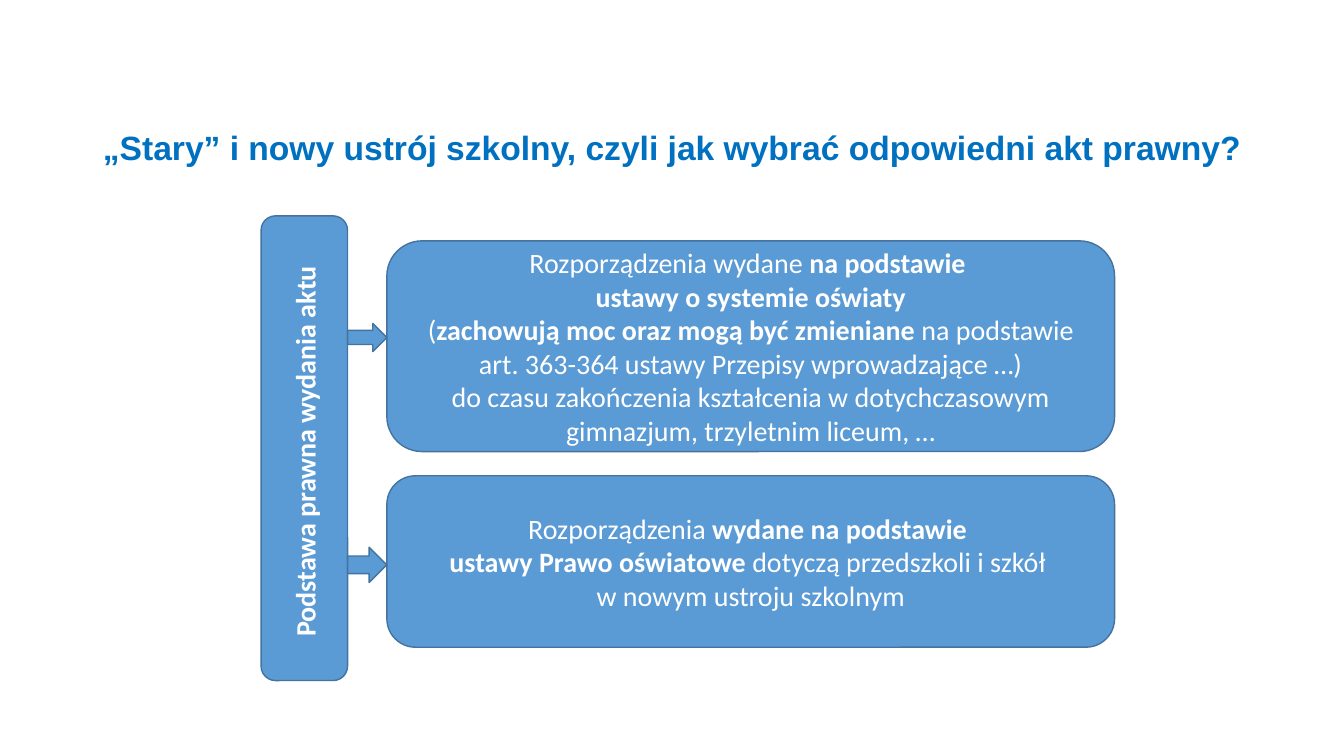
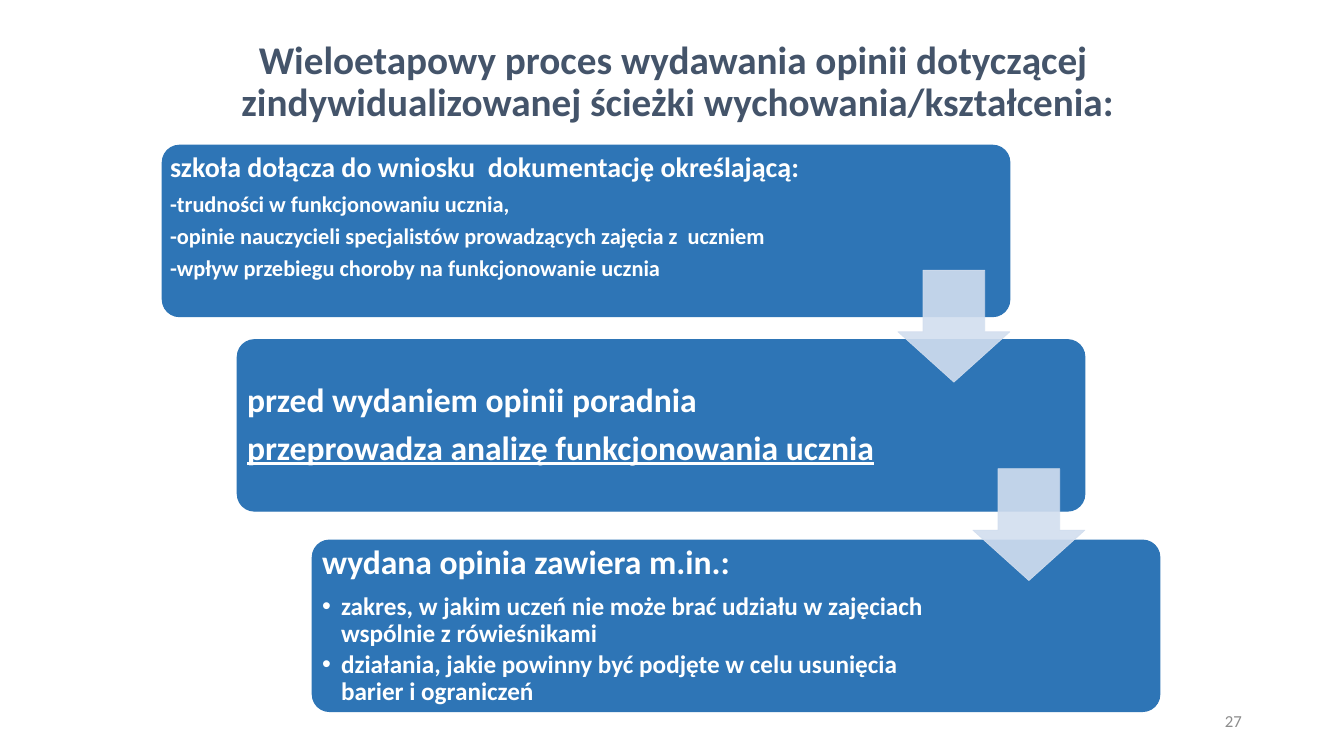
import pptx
import pptx.util
import pptx.dml.color
import pptx.enum.shapes
import pptx.enum.text
import pptx.oxml
import pptx.oxml.ns

Cm = pptx.util.Cm
Pt = pptx.util.Pt
SHAPE = pptx.enum.shapes.MSO_SHAPE
ALIGN = pptx.enum.text.PP_ALIGN
ANCHOR = pptx.enum.text.MSO_ANCHOR


def color(hex_code):
    return pptx.dml.color.RGBColor.from_string(hex_code)


def assign(target, values):
    for attribute, value in values.items():
        setattr(target, attribute, value)


def place(shape, left, top, width, height):
    assign(shape, dict(left=Cm(left), top=Cm(top), width=Cm(width), height=Cm(height)))


class Deck:
    BLUE, BLUE_EDGE = "5B9BD5", "43739E"
    STEP_BLUE, PALE_BLUE = "2E75B6", "D2DEEF"
    LINK_BLUE, SLATE, GREY, WHITE = "0070C0", "44546A", "8C8C8C", "FFFFFF"
    TITLE_LEFT, TITLE_WIDTH = 2.34, 29.21

    def __init__(self):
        self.presentation = pptx.Presentation()
        assign(self.presentation, dict(slide_width=Cm(33.87), slide_height=Cm(19.05)))
        self.slide = None

    def new_slide(self, title, top, height, size, ink, font="Calibri", align=ALIGN.CENTER):
        layout = self.presentation.slide_layouts.get_by_name("Title Only")
        self.slide = self.presentation.slides.add_slide(layout)
        heading = self.slide.shapes.title
        place(heading, self.TITLE_LEFT, top, self.TITLE_WIDTH, height)
        frame = heading.text_frame
        assign(frame, dict(word_wrap=True, vertical_anchor=ANCHOR.MIDDLE, margin_right=0,
                           auto_size=pptx.enum.text.MSO_AUTO_SIZE.NONE))
        self.paragraph(frame, f"*{title}", size, ink, font=font,
                       alignment=align, line_spacing=0.9)

    def paragraph(self, frame, text, size, ink, font="Calibri", underline=None, **layout):
        """Asterisks in the text switch bold on and off."""
        first = frame.paragraphs[0]
        paragraph = frame.add_paragraph() if first.runs else first
        assign(paragraph, layout)
        for part, words in enumerate(text.split("*")):
            for row, line in enumerate(words.split("\n")):
                if row:
                    paragraph.add_line_break()
                if line:
                    run = paragraph.add_run()
                    run.text = line
                    assign(run.font, dict(name=font, size=Pt(size), underline=underline,
                                          bold=part % 2 == 1))
                    run.font.color.rgb = color(ink)
        return paragraph

    def bullet(self, paragraph, indent):
        properties = paragraph._p.get_or_add_pPr()
        properties.set("marL", str(Cm(indent)))
        properties.set("indent", str(-Cm(indent)))
        for tag, attribute, value in (("a:buFont", "typeface", "Arial"),
                                      ("a:buChar", "char", "•")):
            mark = pptx.oxml.ns.qn(tag)
            properties.append(properties.makeelement(mark, {attribute: value}))

    def shape(self, kind, box, fill, edge, edge_width, adjustments=(), opacity=None):
        shape = self.slide.shapes.add_shape(kind, *map(Cm, box))
        shape.shadow.inherit = False
        shape.fill.solid()
        shape.fill.fore_color.rgb = color(fill)
        shape.line.color.rgb = color(edge)
        shape.line.width = Pt(edge_width)
        for index, value in enumerate(adjustments):
            shape.adjustments[index] = value
        if opacity:
            for paint in shape._element.spPr.iter(pptx.oxml.ns.qn("a:srgbClr")):
                alpha = paint.makeelement(pptx.oxml.ns.qn("a:alpha"), {"val": str(opacity * 1000)})
                paint.append(alpha)
        assign(shape.text_frame, dict(word_wrap=True, vertical_anchor=ANCHOR.MIDDLE))
        return shape

    def panel(self, box, lines, vertical=False):
        frame = self.shape(SHAPE.ROUNDED_RECTANGLE, box, self.BLUE, self.BLUE_EDGE, 1).text_frame
        if vertical:
            frame._txBody.bodyPr.set("vert", "vert270")
        for line in lines:
            self.paragraph(frame, line, 20, self.WHITE, alignment=ALIGN.CENTER)

    def link(self, box):
        self.shape(SHAPE.RIGHT_ARROW, box, self.BLUE, self.BLUE_EDGE, 1)

    def step(self, box, lines, text_width, inset, anchor):
        frame = self.shape(SHAPE.ROUNDED_RECTANGLE, box, self.STEP_BLUE, self.STEP_BLUE,
                           0.75, [0.1]).text_frame
        margin = Cm(inset)
        assign(frame, dict(vertical_anchor=anchor, margin_left=margin, margin_top=margin,
                           margin_bottom=margin, margin_right=Cm(box[2] - text_width + inset)))
        for text, size, style in lines:
            bulleted = style == "bullet"
            gap = 0.15 if bulleted else 0.35
            paragraph = self.paragraph(frame, f"*{text}", size, self.WHITE,
                                       underline=style == "underline" or None,
                                       alignment=ALIGN.LEFT, line_spacing=0.9,
                                       space_after=Pt(round(gap * size, 1)))
            if bulleted:
                self.bullet(paragraph, 0.48)

    def descent(self, left, top):
        self.shape(SHAPE.DOWN_ARROW, (left, top, 2.82, 2.82), self.PALE_BLUE, self.PALE_BLUE,
                   0.5, [0.55, 0.45], opacity=90)

    def page_number(self, number):
        footer = self.slide.shapes.add_textbox(Cm(23.93), Cm(17.65), Cm(7.62), Cm(1.02))
        assign(footer.text_frame, dict(word_wrap=True, vertical_anchor=ANCHOR.MIDDLE))
        self.paragraph(footer.text_frame, number, 12, self.GREY, alignment=ALIGN.RIGHT)


def legal_basis(deck):
    deck.new_slide("„Stary” i nowy ustrój szkolny, czyli jak wybrać odpowiedni akt prawny?",
                   2.87, 1.78, 24, deck.LINK_BLUE, font="Arial", align=ALIGN.LEFT)
    deck.panel((9.75, 6.07, 18.34, 5.31), [
        "Rozporządzenia wydane *na podstawie ",
        "*ustawy o systemie oświaty",
        "(*zachowują moc oraz mogą być zmieniane *na podstawie "
        "art. 363-364 ustawy Przepisy wprowadzające …)",
        "do czasu zakończenia kształcenia w dotychczasowym gimnazjum, trzyletnim liceum, …",
    ])
    deck.panel((6.58, 5.44, 2.18, 11.71), ["*Podstawa prawna wydania aktu "], vertical=True)
    deck.panel((9.75, 11.99, 18.34, 4.32), [
        "Rozporządzenia *wydane na podstawie ",
        "*ustawy Prawo oświatowe *dotyczą przedszkoli i szkół \nw nowym ustroju szkolnym",
    ])
    for top, height in ((8.15, 0.71), (13.79, 0.89)):
        deck.link((8.76, top, 0.99, height))


def opinion_process(deck):
    deck.new_slide("Wieloetapowy proces wydawania opinii dotyczącej \n"
                   "zindywidualizowanej ścieżki wychowania/kształcenia:",
                   1.02, 2.13, 28, deck.SLATE)
    steps = [
        (3.66, 16.97, 0.07, ANCHOR.TOP, [
            ("szkoła dołącza do wniosku  dokumentację określającą:", 20, None),
            ("-trudności w funkcjonowaniu ucznia,", 16, None),
            ("-opinie nauczycieli specjalistów prowadzących zajęcia z  uczniem", 16, None),
            ("-wpływ przebiegu choroby na funkcjonowanie ucznia", 16, None),
        ]),
        (8.56, 16.66, 0.12, ANCHOR.MIDDLE, [
            ("przed wydaniem opinii poradnia", 24, None),
            ("przeprowadza analizę funkcjonowania ucznia", 24, "underline"),
        ]),
        (13.61, 16.66, 0.12, ANCHOR.MIDDLE, [
            ("wydana opinia zawiera m.in.:", 24, None),
            ("zakres, w jakim uczeń nie może brać udziału w zajęciach "
             "wspólnie z rówieśnikami", 18, "bullet"),
            ("działania, jakie powinny być podjęte w celu usunięcia "
             "barier i ograniczeń", 18, "bullet"),
        ]),
    ]
    shift = 1.89
    for order, (top, text_width, inset, anchor, lines) in enumerate(steps):
        deck.step((4.09 + shift * order, top, 21.36, 4.32), lines, text_width, inset, anchor)
    for order, top in enumerate((6.81, 11.81)):
        deck.descent(22.63 + shift * order, top)
    deck.page_number("27")


def main():
    deck = Deck()
    legal_basis(deck)
    opinion_process(deck)
    deck.presentation.save("out.pptx")


if __name__ == "__main__":
    main()
